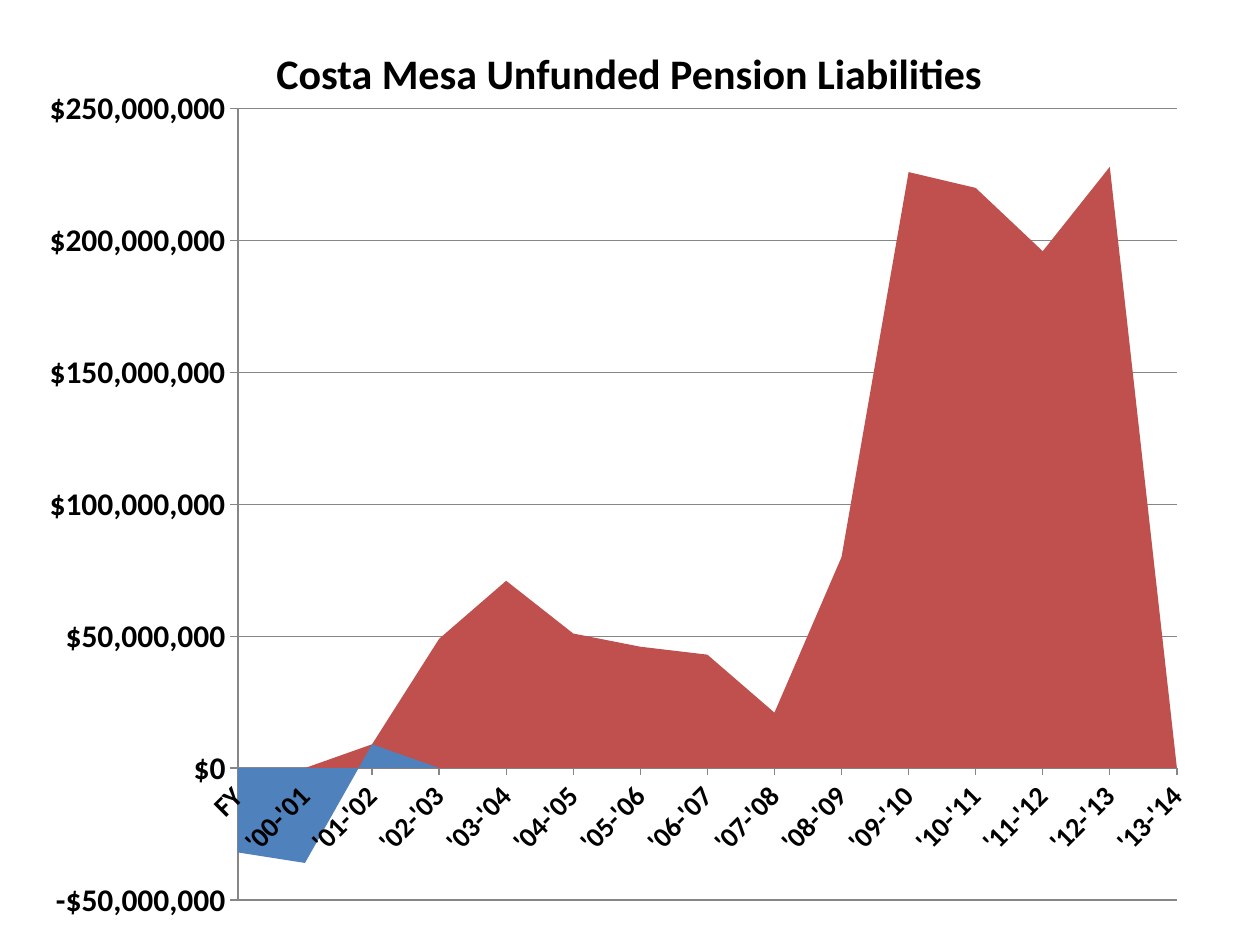
from dataclasses import dataclass

from pptx import Presentation
from pptx.chart.data import CategoryChartData
from pptx.dml.color import RGBColor
from pptx.enum.chart import XL_CHART_TYPE, XL_TICK_MARK
from pptx.enum.text import MSO_ANCHOR, PP_ALIGN
from pptx.oxml import parse_xml
from pptx.oxml.ns import nsdecls, qn
from pptx.util import Inches, Pt

AREA = XL_CHART_TYPE.AREA
TICK_OUT, TICK_NONE = XL_TICK_MARK.OUTSIDE, XL_TICK_MARK.NONE
CENTER, TOP = PP_ALIGN.CENTER, MSO_ANCHOR.TOP
TITLE_ONLY = 5
MILLION = 1_000_000


@dataclass(frozen=True)
class Theme:
    font: str = "Calibri"
    text: RGBColor = RGBColor(0, 0, 0)
    rule: RGBColor = RGBColor(0x86, 0x86, 0x86)
    title_size: Pt = Pt(24)
    chart_size: Pt = Pt(12)
    year_size: Pt = Pt(16)
    dollar_size: Pt = Pt(18)


@dataclass(frozen=True)
class Liability:
    name: str
    color: RGBColor
    millions: list[int]


THEME = Theme()
FISCAL_YEARS = ["FY"] + [f"'{y:02d}-'{y + 1:02d}" for y in range(14)]
LIABILITIES = [
    Liability("Series 1", RGBColor(0x4F, 0x81, 0xBD), [-32, -36, 9] + [0] * 11),
    Liability("Series 2", RGBColor(0xC0, 0x50, 0x4D),
              [0, 0, 9, 49, 71, 51, 46, 43, 21, 80, 226, 220, 196, 228]),
]


def style_font(font, size) -> None:
    font.name, font.size, font.bold = THEME.font, size, True
    font.color.rgb = THEME.text


def style_line(line) -> None:
    line.color.rgb = THEME.rule
    line.width = Pt(0.75)


def style_axis(axis, size) -> None:
    axis.major_tick_mark, axis.minor_tick_mark = TICK_OUT, TICK_NONE
    style_line(axis.format.line)
    style_font(axis.tick_labels.font, size)


def place_plot(chart, x: float, y: float, w: float, h: float) -> None:
    """Fix the inner plot area, given as fractions of the chart."""
    plot_area = chart._chartSpace.chart.plotArea
    for layout in plot_area.findall(qn("c:layout")):
        plot_area.remove(layout)
    sizes = "".join(f'<c:{key} val="{value}"/>' for key, value in
                    (("x", x), ("y", y), ("w", w), ("h", h)))
    plot_area.insert(0, parse_xml(
        f'<c:layout {nsdecls("c")}><c:manualLayout><c:layoutTarget val="inner"/>'
        f'<c:xMode val="edge"/><c:yMode val="edge"/>{sizes}'
        "</c:manualLayout></c:layout>"))


def clear_background(chart) -> None:
    chart._chartSpace.chart.addnext(parse_xml(
        f'<c:spPr {nsdecls("c", "a")}><a:noFill/><a:ln><a:noFill/></a:ln></c:spPr>'))


def add_liability_chart(slide) -> None:
    data = CategoryChartData()
    data.categories = FISCAL_YEARS
    for liability in LIABILITIES:
        data.add_series(liability.name, [m * MILLION for m in liability.millions])
    chart = slide.shapes.add_chart(
        AREA, Inches(-0.58), Inches(0.57), Inches(12.04), Inches(7), data).chart
    chart.has_title = chart.has_legend = False
    style_font(chart.font, THEME.chart_size)
    clear_background(chart)
    place_plot(chart, 0.205, 0.042, 0.619, 0.897)

    chart.plots[0].vary_by_categories = False
    for series, liability in zip(chart.plots[0].series, LIABILITIES):
        series.format.fill.solid()
        series.format.fill.fore_color.rgb = liability.color

    years, dollars = chart.category_axis, chart.value_axis
    style_axis(years, THEME.year_size)
    years.has_major_gridlines = False
    years._element.find(qn("c:txPr")).find(qn("a:bodyPr")).set("rot", "-2700000")

    style_axis(dollars, THEME.dollar_size)
    dollars.minimum_scale, dollars.maximum_scale = -50 * MILLION, 250 * MILLION
    dollars.major_unit = 50 * MILLION
    dollars.has_major_gridlines = True
    style_line(dollars.major_gridlines.format.line)
    dollars.tick_labels.number_format = '"$"#,##0'
    dollars.tick_labels.number_format_is_linked = False
    dollars._element.find(qn("c:crossBetween")).set("val", "midCat")


def set_title(slide, wording: str) -> None:
    title = slide.shapes.title
    title.left, title.top = Inches(2.08), Inches(0.33)
    title.width, title.height = Inches(5.83), Inches(0.5)
    frame = title.text_frame
    frame.word_wrap, frame.vertical_anchor = True, TOP
    heading = frame.paragraphs[0]
    heading.alignment = CENTER
    run = heading.add_run()
    run.text = wording
    style_font(run.font, THEME.title_size)


def main() -> None:
    deck = Presentation()
    deck.slide_width, deck.slide_height = Inches(10), Inches(7.5)
    slide = deck.slides.add_slide(deck.slide_layouts[TITLE_ONLY])
    set_title(slide, "Costa Mesa Unfunded Pension Liabilities")
    add_liability_chart(slide)
    deck.save("out.pptx")


if __name__ == "__main__":
    main()
